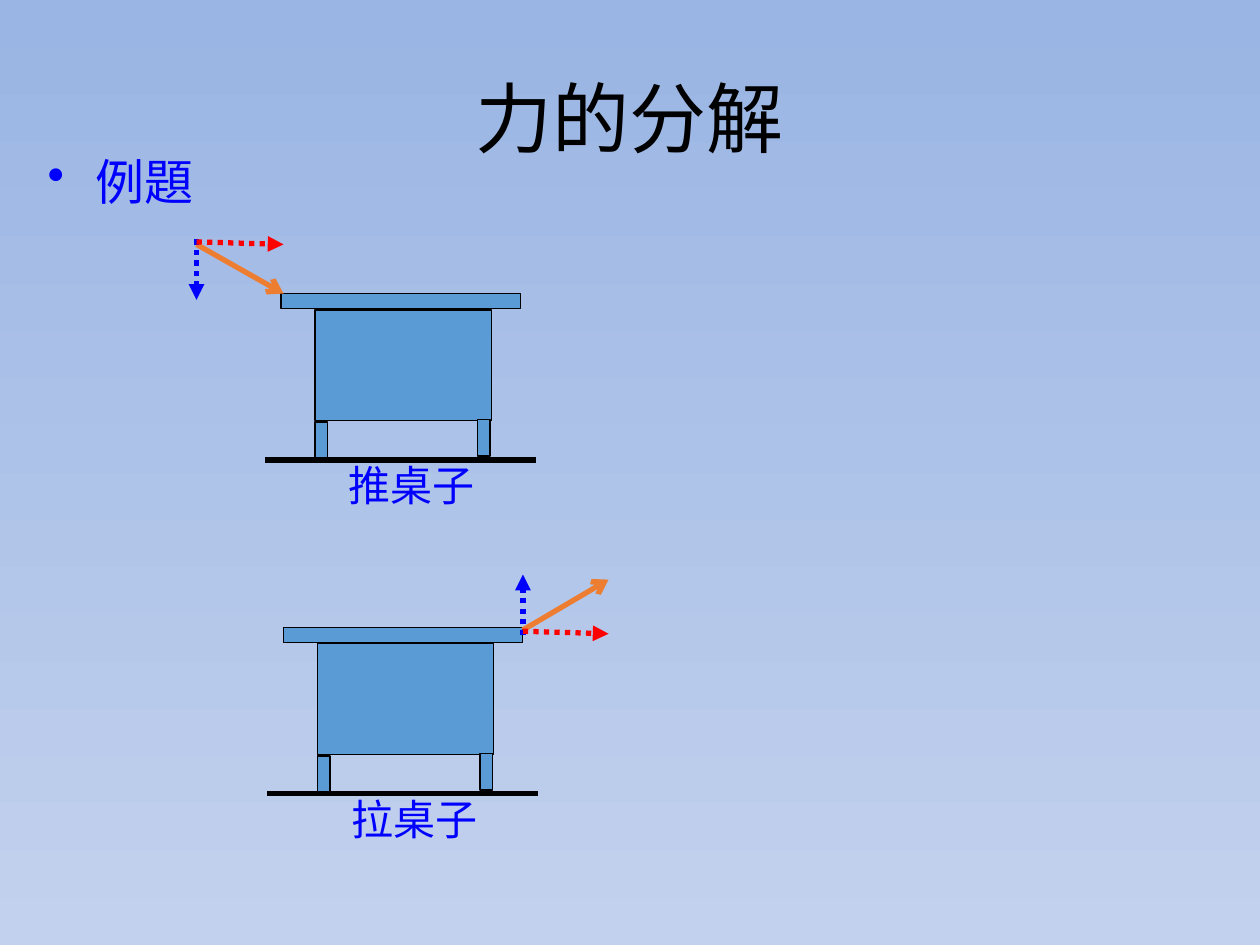
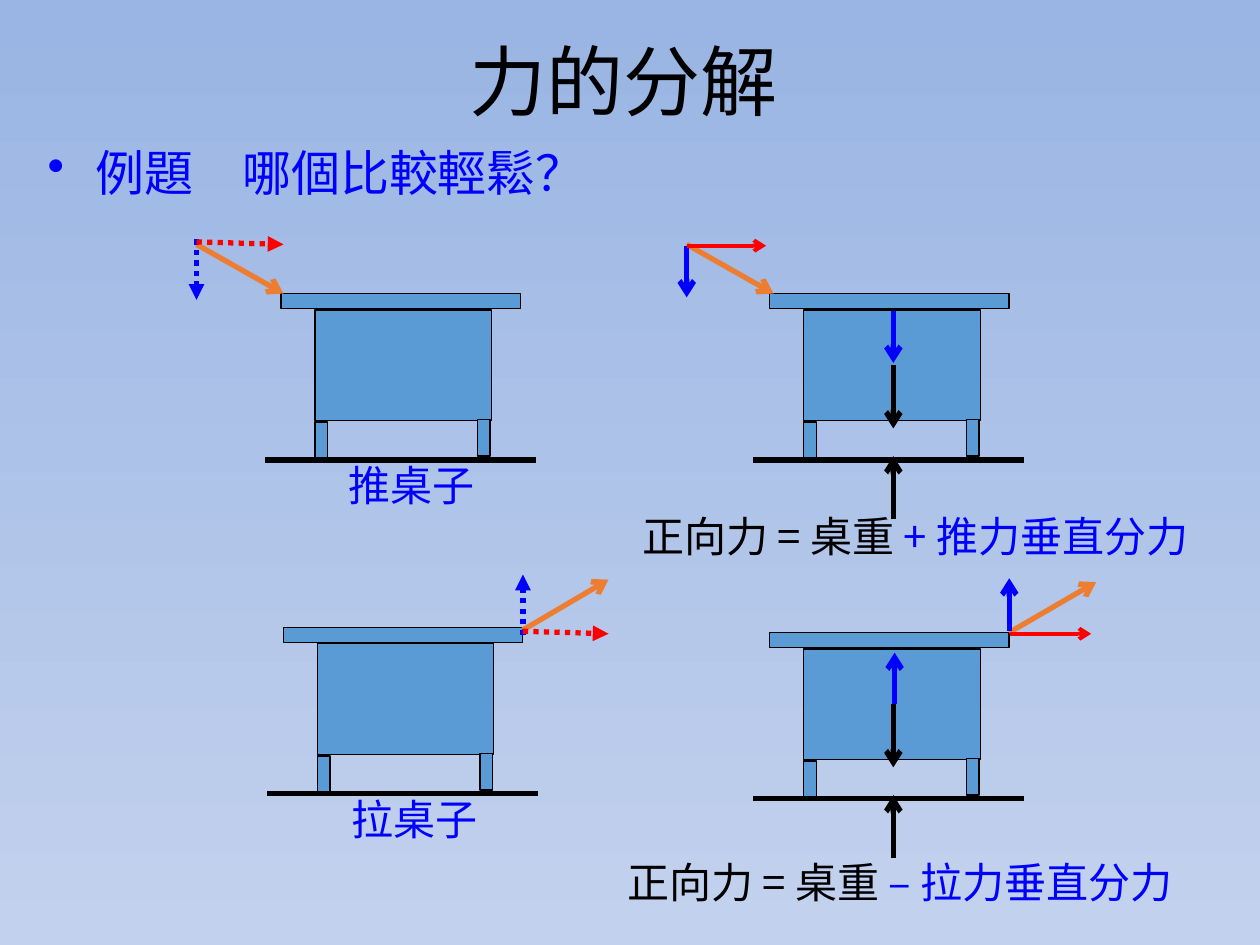
"""Build two slides on resolving the force that pushes or pulls a desk."""
from dataclasses import dataclass

from lxml.etree import SubElement
from pptx import Presentation
from pptx.dml.color import RGBColor
from pptx.enum.dml import MSO_LINE
from pptx.enum.shapes import MSO_CONNECTOR, MSO_SHAPE
from pptx.enum.text import MSO_ANCHOR, PP_ALIGN
from pptx.oxml.ns import qn
from pptx.util import Inches, Pt


@dataclass(frozen=True)
class Theme:
    sky_top: str = "9AB5E4"
    sky_bottom: str = "C2D1ED"
    black: str = "000000"
    blue: str = "0000FF"
    red: str = "FF0000"
    orange: str = "ED7D31"
    desk: str = "5B9BD5"
    font: str = "Noto Sans CJK SC"
    bullet_font: str = "Times New Roman"
    title_size: int = 44
    bullet_size: int = 28
    label_size: int = 24
    outline: float = 0.75
    thin: float = 2.25
    thick: float = 3


THEME = Theme()
TITLE = "力的分解"

DESK_PARTS = [
    (0.27, 0.13, 1.4, 0.88),
    (0, 0, 1.9, 0.12),
    (0.27, 1.02, 0.1, 0.29),
    (1.56, 1, 0.1, 0.29),
]
GROUND = ((-0.13, 1.32), (2.02, 1.32))
CAPTION_BOX = (-0.21, 1.27, 2.5, 0.5)
LOADS = [
    ((0.98, 0.57), (0.98, 1.07), THEME.black, THEME.thick),
    ((0.98, 1.79), (0.98, 1.29), THEME.black, THEME.thick),
]

EXAMPLES = [
    {
        "at": (2.23, 2.33),
        "box": CAPTION_BOX,
        "text": [("推桌子", THEME.blue)],
        "align": PP_ALIGN.CENTER,
        "forces": [((-0.67, -0.39), (0.02, 0), THEME.orange, THEME.thick)],
        "components": [
            ((-0.67, -0.43), (-0.67, 0.05), THEME.blue, THEME.thick),
            ((-0.67, -0.41), (0.02, -0.39), THEME.red, THEME.thick),
        ],
    },
    {
        "at": (2.25, 4.98),
        "box": CAPTION_BOX,
        "text": [("拉桌子", THEME.blue)],
        "align": PP_ALIGN.CENTER,
        "forces": [((1.9, 0.02), (2.58, -0.38), THEME.orange, THEME.thick)],
        "components": [
            ((1.9, 0.06), (1.9, -0.42), THEME.blue, THEME.thick),
            ((1.9, 0.03), (2.58, 0.05), THEME.red, THEME.thick),
        ],
    },
]
ANALYSES = [
    {
        "at": (6.11, 2.33),
        "box": (-1.11, 1.67, 4.93, 0.5),
        "text": [("正向力 = 桌重 ", THEME.black), ("+ 推力垂直分力", THEME.blue)],
        "align": PP_ALIGN.LEFT,
        "forces": LOADS + [
            ((-0.66, -0.39), (0.03, 0), THEME.orange, THEME.thick),
            ((-0.66, -0.38), (-0.66, 0.03), THEME.blue, THEME.thick),
            ((-0.66, -0.38), (-0.03, -0.38), THEME.red, THEME.thin),
            ((0.98, 0.14), (0.98, 0.55), THEME.blue, THEME.thick),
        ],
        "components": [],
    },
    {
        "at": (6.11, 5.02),
        "box": (-1.23, 1.73, 5.17, 1.11),
        "text": [("正向力 = 桌重 ", THEME.black), ("– 拉力垂直分力", THEME.blue)],
        "align": PP_ALIGN.LEFT,
        "forces": LOADS + [
            ((1.9, 0), (2.59, -0.4), THEME.orange, THEME.thick),
            ((1.9, -0.01), (1.9, -0.43), THEME.blue, THEME.thick),
            ((1.91, 0.01), (2.55, 0.01), THEME.red, THEME.thin),
            ((0.99, 0.57), (0.99, 0.16), THEME.blue, THEME.thick),
        ],
        "components": [],
    },
]
SLIDES = [
    {
        "title_at": (0.5, 0.3),
        "bullet_top": 1.15,
        "bullet": [("例題", THEME.bullet_font)],
        "desks": EXAMPLES,
    },
    {
        "title_at": (0.45, 0.01),
        "bullet_top": 1.08,
        "bullet": [("例題　", THEME.bullet_font), ("哪個比較輕鬆？", THEME.font)],
        "desks": ANALYSES + EXAMPLES,
    },
]


def rgb(color):
    return RGBColor.from_string(color)


def style_font(font, size, color=None, name=THEME.font):
    font.size = Pt(size)
    font.name = name
    if color:
        font.color.rgb = rgb(color)


def paint_background(page):
    fill = page.background.fill
    fill.gradient()
    fill.gradient_angle = 270
    for stop, color in zip(fill.gradient_stops, (THEME.sky_top, THEME.sky_bottom)):
        stop.color.rgb = rgb(color)


def add_title(page, left, top):
    title = page.shapes.title
    title.left, title.top, title.width, title.height = map(Inches, (left, top, 9, 1.25))
    title.text_frame.vertical_anchor = MSO_ANCHOR.MIDDLE
    title.text_frame.text = TITLE
    para = title.text_frame.paragraphs[0]
    para.alignment = PP_ALIGN.CENTER
    style_font(para.font, THEME.title_size, THEME.black)


def add_text(shapes, left, top, width, height):
    box = shapes.add_textbox(*map(Inches, (left, top, width, height)))
    box.text_frame.word_wrap = True
    return box.text_frame.paragraphs[0]


def add_bullet(page, top, spans):
    para = add_text(page.shapes, 0.28, top, 9.34, 1.13)
    properties = para._p.get_or_add_pPr()
    properties.set("marL", str(Inches(0.38)))
    properties.set("indent", str(-Inches(0.38)))
    SubElement(properties, qn("a:buChar")).set("char", "•")
    for text, name in spans:
        span = para.add_run()
        span.text = text
        style_font(span.font, THEME.bullet_size, THEME.blue, name)


def add_line(shapes, origin, start, end, color, width, head=None, dash=None):
    points = [Inches(base + offset) for point in (start, end) for base, offset in zip(origin, point)]
    connector = shapes.add_connector(MSO_CONNECTOR.STRAIGHT, *points)
    connector.line.color.rgb = rgb(color)
    connector.line.width = Pt(width)
    if dash:
        connector.line.dash_style = dash
    if head:
        SubElement(connector.line._get_or_add_ln(), qn("a:tailEnd")).set("type", head)
    SubElement(connector._element.spPr, qn("a:effectLst"))


def add_desk(page, desk):
    shapes = page.shapes.add_group_shape().shapes
    origin = left, top = desk["at"]
    for x, y, width, height in DESK_PARTS:
        part = shapes.add_shape(MSO_SHAPE.RECTANGLE, *map(Inches, (left + x, top + y, width, height)))
        part.shadow.inherit = False
        part.fill.solid()
        part.fill.fore_color.rgb = rgb(THEME.desk)
        part.line.color.rgb = rgb(THEME.black)
        part.line.width = Pt(THEME.outline)
    add_line(shapes, origin, *GROUND, THEME.black, THEME.thick)

    x, y, width, height = desk["box"]
    para = add_text(shapes, left + x, top + y, width, height)
    para.alignment = desk["align"]
    style_font(para.font, THEME.label_size)
    for text, color in desk["text"]:
        span = para.add_run()
        span.text = text
        span.font.color.rgb = rgb(color)

    for force in desk["forces"]:
        add_line(shapes, origin, *force, head="arrow")
    for component in desk["components"]:
        add_line(shapes, origin, *component, head="triangle", dash=MSO_LINE.ROUND_DOT)


def main():
    deck = Presentation()
    deck.slide_width, deck.slide_height = Inches(10), Inches(7.5)
    for content in SLIDES:
        page = deck.slides.add_slide(deck.slide_layouts[5])
        paint_background(page)
        add_bullet(page, content["bullet_top"], content["bullet"])
        add_title(page, *content["title_at"])
        for desk in content["desks"]:
            add_desk(page, desk)
    deck.save("out.pptx")


if __name__ == "__main__":
    main()
